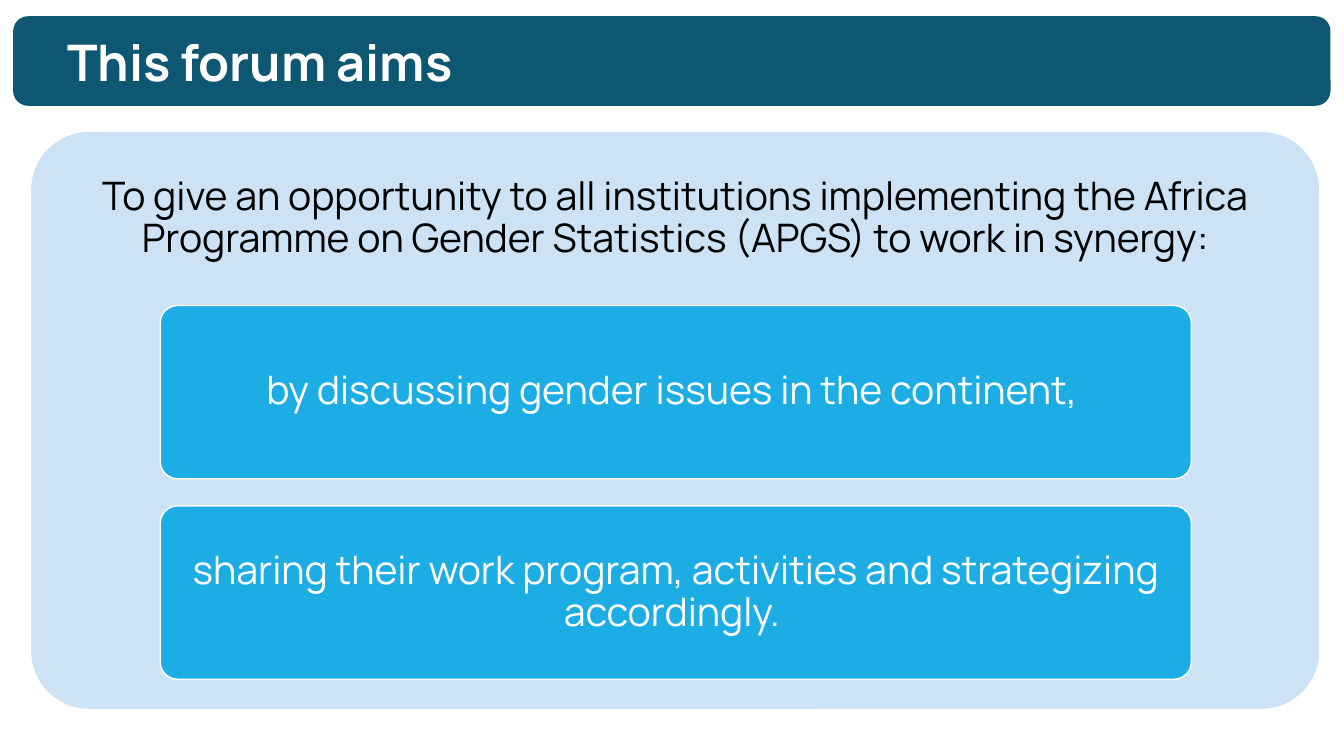
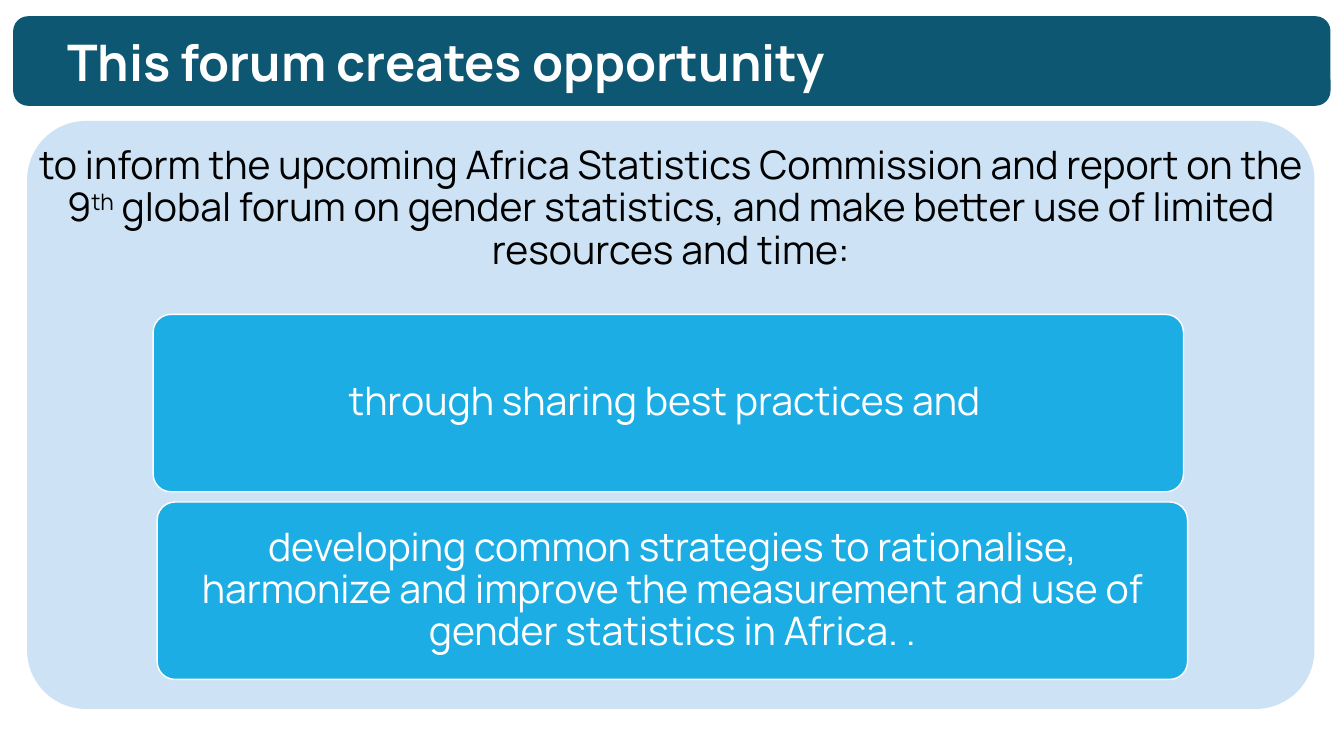
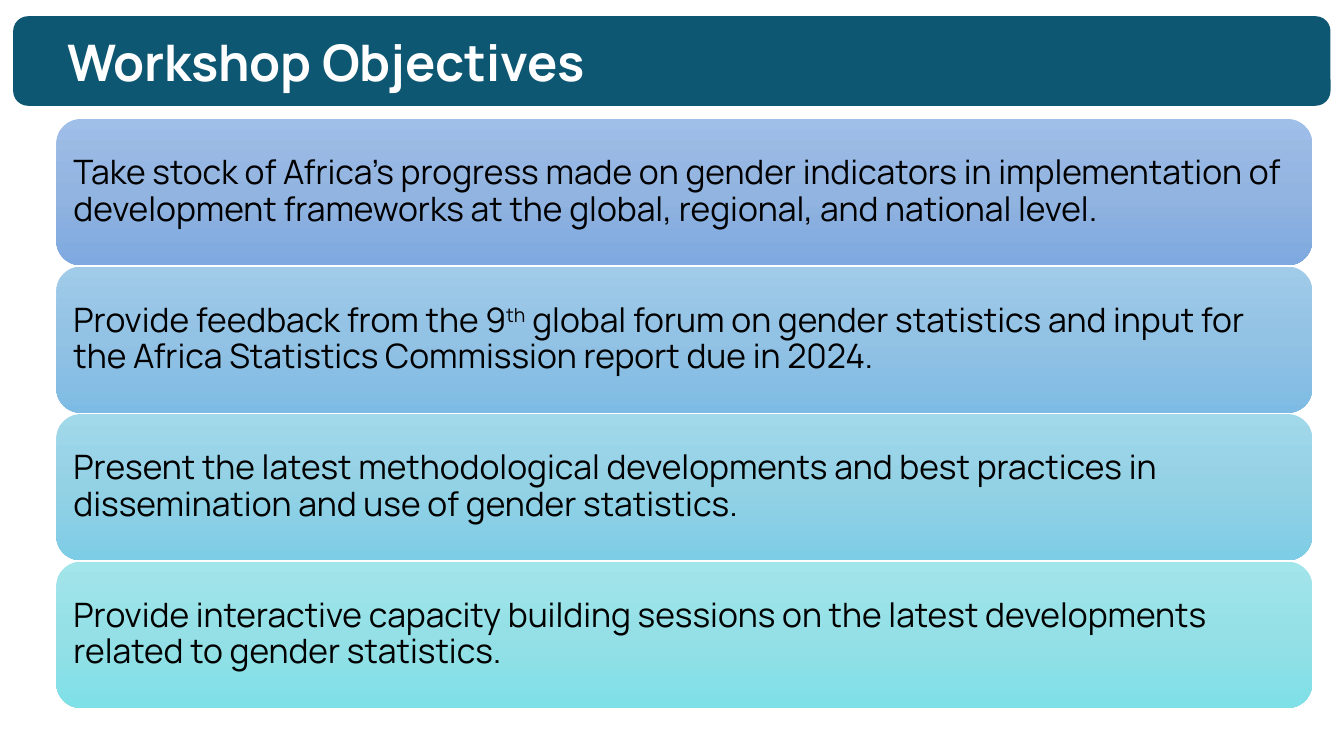
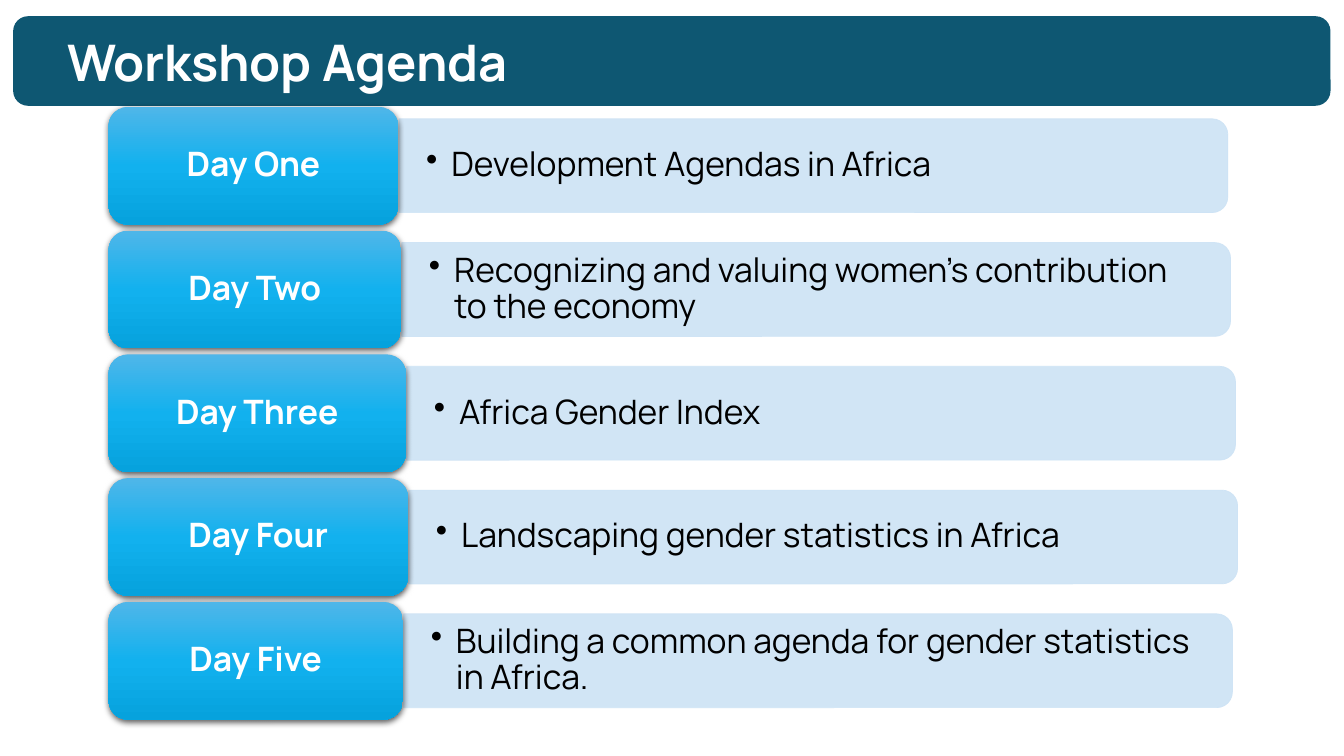
from dataclasses import dataclass

from lxml import etree
from pptx import Presentation
from pptx.dml.color import RGBColor
from pptx.enum import shapes, text
from pptx.oxml.ns import qn
from pptx.util import Pt


@dataclass(frozen=True)
class Theme:
    font: str = "Manrope"
    band: str = "0E5772"
    panel: str = "CDE3F5"
    card: str = "1CADE4"
    light: str = "FFFFFF"
    dark: str = "000000"
    day: tuple = ("4FB6E9", "12B1EE", "06A2DD")
    title_size: int = 36
    panel_size: int = 28
    list_size: int = 24


THEME = Theme()
SLIDE_SIZE = (960, 540)
BAND = (9.4, 11.6, 941, 64)
TITLE_INDENT = 38.5

PANELS = [
    {
        "title": "This forum aims",
        "panel": (22.3, 94.3, 920, 412),
        "intro": "To give an opportunity to all institutions implementing the Africa "
                 "Programme on Gender Statistics (APGS) to work in synergy:",
        "intro_height": 124,
        "cards": [
            (114.5, 218.2, 736.5, 123.8, "by discussing gender issues in the continent, "),
            (114.5, 361.4, 736.5, 123.8,
             "sharing their work program, activities and strategizing accordingly. "),
        ],
    },
    {
        "title": "This forum creates opportunity",
        "panel": (19.4, 86.4, 919.5, 420),
        "intro": "to inform the upcoming Africa Statistics Commission and report on the 9^th^ "
                 "global forum on gender statistics, and make better use of limited "
                 "resources and time:",
        "intro_height": 126,
        "cards": [
            (109.4, 224.6, 736, 126.7, "through sharing best practices and "),
            (112.3, 358.6, 736, 126.7,
             "developing common strategies to rationalise, harmonize and improve the "
             "measurement and use of gender statistics in Africa. ."),
        ],
    },
]

OBJECTIVES = [
    ("Take stock of Africa’s progress made on gender indicators in implementation of "
     "development frameworks at the global, regional, and national level.",
     ("9FBEE8", "92B4E0", "7EA9E0")),
    ("Provide feedback from the 9^th^ global forum on gender statistics and input for "
     "the Africa Statistics Commission report due in 2024.",
     ("A0CBE9", "92C2E4", "7EBBE4")),
    ("Present the latest methodological developments and best practices in "
     "dissemination and use of gender statistics.",
     ("A1D8EA", "93D1E5", "7ECDE6")),
    ("Provide interactive capacity building sessions on the latest developments "
     "related to gender statistics.",
     ("A2E5EB", "94E0E6", "7FE0E7")),
]
OBJECTIVE_GRID = {"left": 40.3, "top": 85, "width": 897, "height": 104.4, "pitch": 105.4}

AGENDA = [
    ("Day One", 207, "Development Agendas in Africa"),
    ("Day Two", 209, "Recognizing and valuing women’s contribution to the economy"),
    ("Day Three", 212.5, "Africa Gender Index"),
    ("Day Four", 214, "Landscaping gender statistics in Africa"),
    ("Day Five", 210.3, "Building a common agenda for gender statistics in Africa."),
]
AGENDA_GRID = {"left": 77.5, "top": 76.3, "height": 84.2, "pitch": 88.4,
               "topic_width": 592, "topic_height": 67}


def add_element(parent, tag, **attributes):
    element = etree.SubElement(parent, qn(tag))
    for name, value in attributes.items():
        element.set(name, str(value))
    return element


def write(shape, content, size, colour, bold=False, centred=False, margins=(7.2, 7.2),
          spacing=0.9, bullet=False):
    frame = shape.text_frame
    frame.word_wrap = True
    frame.auto_size = text.MSO_AUTO_SIZE.NONE
    frame.vertical_anchor = text.MSO_ANCHOR.MIDDLE
    frame.margin_left = frame.margin_right = Pt(margins[0])
    frame.margin_top = frame.margin_bottom = Pt(margins[1])
    paragraph = frame.paragraphs[0]
    paragraph.alignment = text.PP_ALIGN.CENTER if centred else text.PP_ALIGN.LEFT
    paragraph.line_spacing = spacing
    if bullet:
        properties = paragraph._p.get_or_add_pPr()
        properties.set("marL", str(Pt(18)))
        properties.set("indent", str(Pt(-18)))
        add_element(properties, "a:buChar", char="•")
    for index, part in enumerate(content.split("^")):
        run = paragraph.add_run()
        run.text = part
        run.font.name = THEME.font
        run.font.size = Pt(size)
        run.font.bold = bold
        run.font.color.rgb = RGBColor.from_string(colour)
        if index % 2:
            run._r.get_or_add_rPr().set("baseline", "30000")


def add_box(slide, box, fill, corner=None, line=None, line_width=1,
            kind=shapes.MSO_SHAPE.ROUNDED_RECTANGLE):
    shape = slide.shapes.add_shape(kind, *map(Pt, box))
    shape.shadow.inherit = False
    if isinstance(fill, tuple):
        shape.fill.gradient()
        shape.fill.gradient_angle = 270
        stops = shape.element.spPr.find(".//" + qn("a:gsLst"))
        for stop in list(stops):
            stops.remove(stop)
        for position, colour in zip((0, 50000, 100000), fill):
            add_element(add_element(stops, "a:gs", pos=position), "a:srgbClr", val=colour)
    else:
        shape.fill.solid()
        shape.fill.fore_color.rgb = RGBColor.from_string(fill)
    if corner is not None:
        shape.adjustments[0] = corner
    if line:
        shape.line.color.rgb = RGBColor.from_string(line)
        shape.line.width = Pt(line_width)
    else:
        shape.line.fill.background()
    return shape


def add_text(slide, box, content, **style):
    write(slide.shapes.add_textbox(*map(Pt, box)), content, **style)


def add_shadow(shape):
    effects = shape.element.spPr.find(qn("a:effectLst"))
    shadow = add_element(effects, "a:outerShdw", blurRad=Pt(4.5), dist=Pt(1.5),
                         dir=5400000, algn="ctr", rotWithShape=0)
    add_element(add_element(shadow, "a:srgbClr", val=THEME.dark), "a:alpha", val=63000)


def add_titled_slide(presentation, heading):
    slide = presentation.slides.add_slide(presentation.slide_layouts[5])
    title = slide.shapes.title
    title.left, title.top, title.width, title.height = map(Pt, BAND)
    write(title, heading, THEME.title_size, THEME.light, bold=True,
          margins=(TITLE_INDENT, 7.2), spacing=1.0)
    band = add_box(slide, BAND, THEME.band)
    title.element.addprevious(band.element)
    return slide


def build_panel(presentation, content):
    slide = add_titled_slide(presentation, content["title"])
    left, top, width, _ = content["panel"]
    add_box(slide, content["panel"], THEME.panel, corner=0.1)
    add_text(slide, (left, top, width, content["intro_height"]), content["intro"],
             size=THEME.panel_size, colour=THEME.dark, centred=True, margins=(8.4, 8.4))
    for *box, label in content["cards"]:
        card = add_box(slide, box, THEME.card, corner=0.1, line=THEME.light)
        write(card, label, THEME.panel_size, THEME.light, centred=True, margins=(5.6, 4.2))


def build_objectives(presentation):
    slide = add_titled_slide(presentation, "Workshop Objectives")
    grid = OBJECTIVE_GRID
    for row, (objective, colours) in enumerate(OBJECTIVES):
        box = (grid["left"], grid["top"] + row * grid["pitch"], grid["width"], grid["height"])
        write(add_box(slide, box, colours), objective, THEME.list_size, THEME.dark)


def build_agenda(presentation):
    slide = add_titled_slide(presentation, "Workshop Agenda")
    grid = AGENDA_GRID
    width, height = grid["topic_width"], grid["topic_height"]
    for row, (day, day_width, topic) in enumerate(AGENDA):
        top = grid["top"] + row * grid["pitch"]
        middle = top + grid["height"] / 2
        topic_left = grid["left"] + day_width + 0.5
        upright = (topic_left + (width - height) / 2, middle - width / 2, height, width)
        bar = add_box(slide, upright, THEME.panel, line=THEME.panel, line_width=0.5,
                      kind=shapes.MSO_SHAPE.ROUND_2_SAME_RECTANGLE)
        bar.rotation = 90
        for colour in bar.element.spPr.iter(qn("a:srgbClr")):
            add_element(colour, "a:alpha", val=90000)
        add_text(slide, (topic_left, middle - height / 2, width - 3, height), topic,
                 size=THEME.list_size, colour=THEME.dark, margins=(19.4, 6), bullet=True)
        label = add_box(slide, (grid["left"], top, day_width, grid["height"]), THEME.day)
        add_shadow(label)
        write(label, day, THEME.list_size, THEME.light, bold=True, centred=True)


def main():
    presentation = Presentation()
    presentation.slide_width, presentation.slide_height = map(Pt, SLIDE_SIZE)
    for content in PANELS:
        build_panel(presentation, content)
    build_objectives(presentation)
    build_agenda(presentation)
    presentation.save("out.pptx")


if __name__ == "__main__":
    main()
